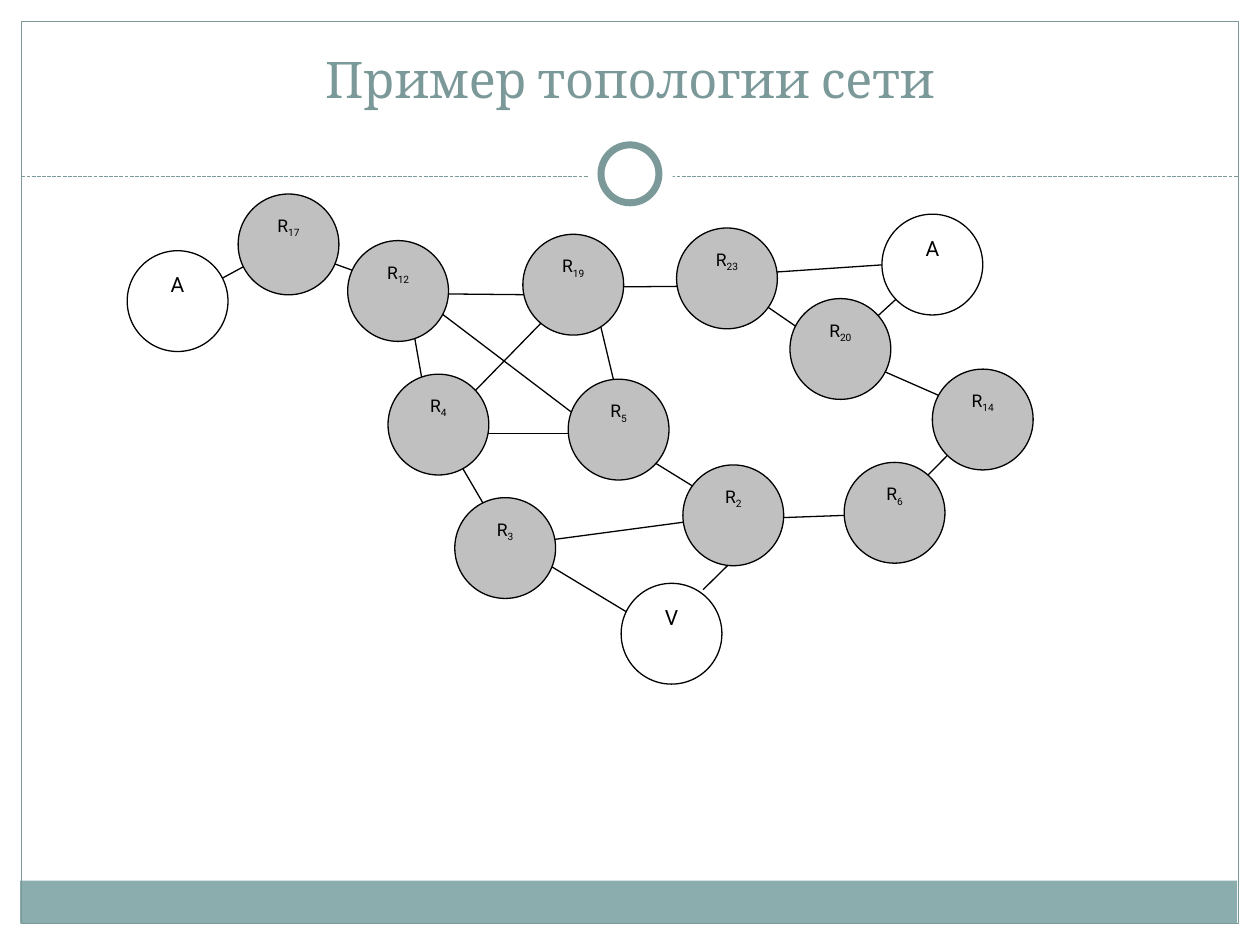
import pptx
import pptx.util
import pptx.dml.color
import pptx.enum.dml
import pptx.enum.shapes
import pptx.enum.text
import lxml.etree
from pptx.util import Inches

COLORS = {"teal": "7C999A", "band": "8CADAE", "router": "C0C0C0",
          "white": "FFFFFF", "black": "000000"}
SHAPES = pptx.enum.shapes.MSO_SHAPE
NODE_SIZE = 0.8


def rgb(name):
    return pptx.dml.color.RGBColor.from_string(COLORS[name])


def add_figure(shapes, kind, box, fill=None, line=None, width=0.75):
    shape = shapes.add_shape(kind, *[Inches(value) for value in box])
    shape.shadow.inherit = False
    if fill:
        shape.fill.solid()
        shape.fill.fore_color.rgb = rgb(fill)
    else:
        shape.fill.background()
    if line:
        shape.line.color.rgb = rgb(line)
        shape.line.width = pptx.util.Pt(width)
    else:
        shape.line.fill.background()
    return shape


def add_line(shapes, start, end, color):
    connector = shapes.add_connector(
        pptx.enum.shapes.MSO_CONNECTOR.STRAIGHT,
        *[Inches(value) for value in (*start, *end)])
    connector.line.color.rgb = rgb(color)
    connector.line.width = pptx.util.Pt(0.75)
    properties = connector._element.spPr
    lxml.etree.SubElement(properties, pptx.oxml.ns.qn("a:effectLst"))
    return connector


presentation = pptx.Presentation()
presentation.slide_width = Inches(10)
presentation.slide_height = Inches(7.5)
slide = presentation.slides.add_slide(presentation.slide_layouts[5])

# Frame, bottom band and divider with ring
add_figure(slide.shapes, SHAPES.RECTANGLE, (0.16, 6.99, 9.66, 0.34), "band")
add_figure(slide.shapes, SHAPES.RECTANGLE, (0.17, 0.17, 9.66, 7.16), line="teal")
divider = add_line(slide.shapes, (0.17, 1.4), (9.83, 1.4), "teal")
divider.line.dash_style = pptx.enum.dml.MSO_LINE.SQUARE_DOT
add_figure(slide.shapes, SHAPES.OVAL, (4.67, 1.05, 0.67, 0.67), "white")
add_figure(slide.shapes, SHAPES.OVAL, (4.77, 1.15, 0.46, 0.46), "white", "teal", 4)

# Title
title = slide.shapes.title
title.left, title.top, title.width, title.height = [
    Inches(value) for value in (0.5, 0.3, 9, 0.61)]
title.text_frame.auto_size = pptx.enum.text.MSO_AUTO_SIZE.NONE
title.text_frame.vertical_anchor = pptx.enum.text.MSO_ANCHOR.BOTTOM
paragraph = title.text_frame.paragraphs[0]
paragraph.alignment = pptx.enum.text.PP_ALIGN.CENTER
run = paragraph.add_run()
run.text = "Пример топологии сети"
run.font.name = "Cambria"
run.font.size = pptx.util.Pt(28.8)
run.font.color.rgb = rgb("teal")

# Network links, drawn beneath the nodes
network = slide.shapes.add_group_shape()
links = [
    ((4.15, 4.36), (5.26, 5.03)),  # R3 - V
    ((6.18, 4.09), (5.58, 4.68)),  # R2 - V
    ((3.51, 3.44), (3.99, 4.26)),  # R4 - R3
    ((4.82, 3.44), (5.76, 4.02)),  # R5 - R2
    ((6.99, 4.08), (5.89, 4.12)),  # R6 - R2
    ((4.11, 4.32), (5.76, 4.1)),   # R3 - R2
    ((3.59, 3.44), (4.69, 3.44)),  # R4 - R5
    ((3.24, 2.39), (3.4, 3.3)),    # R12 - R4
    ((3.24, 2.33), (4.26, 2.34)),  # R12 - R19
    ((4.72, 2.39), (4.93, 3.27)),  # R19 - R5
    ((3.23, 2.28), (4.85, 3.51)),  # R12 - R5
    ((3.49, 3.39), (4.6, 2.25)),   # R4 - R19
    ((7.08, 4.06), (7.79, 3.34)),  # R6 - R14
    ((2.34, 1.98), (3.17, 2.28)),  # R17 - R12
    ((2.24, 1.95), (1.41, 2.4)),   # R17 - A
    ((4.57, 2.28), (5.73, 2.27)),  # R19 - R23
    ((7.75, 3.27), (6.77, 2.84)),  # R14 - R20
    ((5.72, 2.18), (6.65, 2.82)),  # R23 - R20
    ((5.85, 2.18), (7.33, 2.08)),  # R23 - A
    ((7.4, 2.11), (6.67, 2.78)),   # A - R20
]
for start, end in links:
    add_line(network.shapes, start, end, "black")

# Nodes: routers carry a subscript number, end hosts a single letter
nodes = [
    ("R", "17", 1.89, 1.54), ("R", "12", 2.76, 1.91), ("R", "19", 4.15, 1.86),
    ("R", "4", 3.08, 2.97), ("R", "5", 4.51, 3.01), ("R", "23", 5.37, 1.81),
    ("R", "20", 6.27, 2.37), ("R", "14", 7.4, 2.93), ("R", "6", 6.7, 3.67),
    ("R", "2", 5.42, 3.69), ("R", "3", 3.61, 3.95),
    ("A", "", 7, 1.7), ("A", "", 1.01, 1.99), ("V", "", 4.93, 4.63),
]
for letter, number, left, top in nodes:
    node = add_figure(network.shapes, SHAPES.OVAL, (left, top, NODE_SIZE, NODE_SIZE),
                      "router" if number else "white", "black")
    node.text_frame.vertical_anchor = pptx.enum.text.MSO_ANCHOR.TOP
    paragraph = node.text_frame.paragraphs[0]
    paragraph.alignment = pptx.enum.text.PP_ALIGN.CENTER
    for text in filter(None, (letter, number)):
        run = paragraph.add_run()
        run.text = text
        run.font.name = "Roboto"
        run.font.size = pptx.util.Pt(10 if number else 12)
        run.font.color.rgb = rgb("black")
        if text == number:
            run.font._element.set("baseline", "-25000")

presentation.save("out.pptx")
